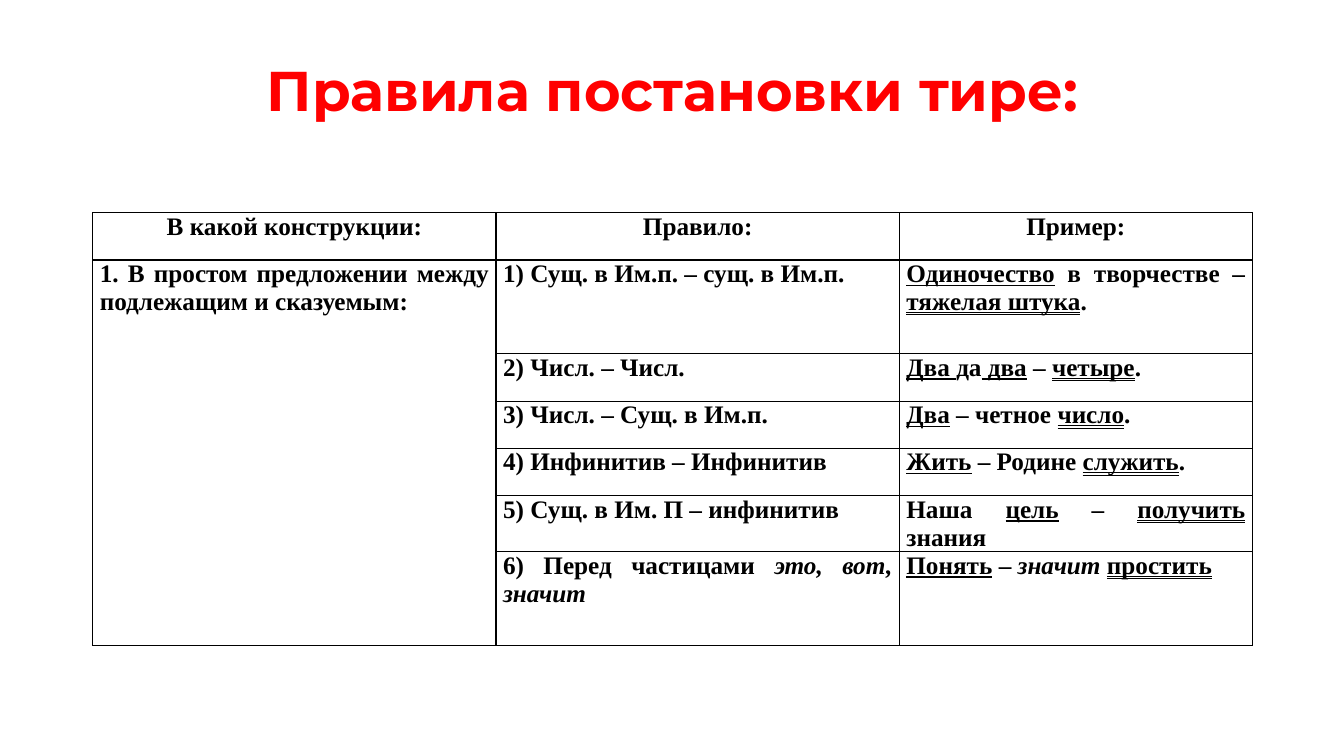
from dataclasses import dataclass
from lxml.etree import SubElement
from pptx import Presentation
from pptx.dml.color import RGBColor as RGB
from pptx.enum.text import MSO_ANCHOR as Anchor, MSO_UNDERLINE as Line, PP_ALIGN as Align
from pptx.oxml.ns import qn
from pptx.util import Inches, Pt


@dataclass(frozen=True)
class Theme:
    red: RGB = RGB(0xFF, 0, 0)
    ink: RGB = RGB(0, 0, 0)
    head: str = "Montserrat"
    body: str = "Times New Roman"
    big: int = 40
    text: int = 18
    rule: int = 1


THEME = Theme()
COLS = [4, 4, 3.5]
ROWS = [0.47, 0.93, 0.47, 0.47, 0.47, 0.47, 0.93]

# Pieces are split by "|"; a leading mark sets the style:
# "_" subject (single line), "=" predicate (double line), "/" italic
CELLS = [
    ["В какой конструкции:", "Правило:", "Пример:"],
    ["1. В простом предложении между подлежащим и сказуемым:",
     "1) Сущ. в Им.п. – сущ. в Им.п.",
     "_Одиночество| в творчестве – |=тяжелая штука|."],
    ["", "2) Числ. – Числ.", "_Два |да|_ два| – |=четыре|."],
    ["", "3) Числ. – Сущ. в Им.п.", "_Два| – четное |=число|."],
    ["", "4) Инфинитив – Инфинитив", "_Жить| – Родине |=служить|."],
    ["", "5) Сущ. в Им. П – инфинитив", "Наша |_цель| – |=получить |знания"],
    ["", "6) Перед частицами |/это, вот, значит",
     "_Понять| – |/значит |=простить"],
]
LINES = {"_": Line.SINGLE_LINE, "=": Line.DOUBLE_LINE}


def style(run, face, size, color):
    font = run.font
    font.name, font.size, font.bold = face, Pt(size), True
    font.color.rgb = color


def add_title(slide, left, top, width, height):
    title = slide.shapes.title
    title.left, title.top = Inches(left), Inches(top)
    title.width, title.height = Inches(width), Inches(height)
    frame = title.text_frame
    frame.text = "Правила постановки тире:"
    frame.vertical_anchor = Anchor.MIDDLE
    para = frame.paragraphs[0]
    para.alignment, para.line_spacing = Align.CENTER, 0.9
    style(para.runs[0], THEME.head, THEME.big, THEME.red)


def write(para, text):
    for part in text.split("|"):
        mark = part[0] if part[0] in "_=/" else ""
        run = para.add_run()
        run.text = part[len(mark):]
        style(run, THEME.body, THEME.text, THEME.ink)
        if mark in LINES:
            run.font.underline = LINES[mark]
        elif mark == "/":
            run.font.italic = True


def frame_cell(cell):
    cell.margin_left = cell.margin_right = Inches(0.07)
    cell.margin_top = cell.margin_bottom = 0
    props = cell._tc.get_or_add_tcPr()
    for side in ("a:lnL", "a:lnR", "a:lnT", "a:lnB"):
        edge = SubElement(props, qn(side), w=str(Pt(THEME.rule)))
        fill = SubElement(edge, qn("a:solidFill"))
        SubElement(fill, qn("a:srgbClr"), val=str(THEME.ink))
    cell.fill.background()


def add_rules(slide, left, top):
    shape = slide.shapes.add_table(
        len(ROWS), len(COLS), Inches(left), Inches(top),
        Inches(sum(COLS)), Inches(sum(ROWS)))
    table = shape.table
    table.first_row = table.horz_banding = False
    for col, width in zip(table.columns, COLS):
        col.width = Inches(width)
    for row, height in zip(table.rows, ROWS):
        row.height = Inches(height)
    # One construction covers all six rules
    table.cell(1, 0).merge(table.cell(len(ROWS) - 1, 0))
    for r, line in enumerate(CELLS):
        for c, text in enumerate(line):
            cell = table.cell(r, c)
            frame_cell(cell)
            if text:
                para = cell.text_frame.paragraphs[0]
                para.alignment = Align.JUSTIFY if r else Align.CENTER
                write(para, text)


def main():
    deck = Presentation()
    deck.slide_width, deck.slide_height = Inches(13.33), Inches(7.5)
    slide = deck.slides.add_slide(deck.slide_layouts[5])
    add_title(slide, 0.92, 0.4, 11.5, 1.05)
    add_rules(slide, 0.92, 2.11)
    deck.save("out.pptx")


if __name__ == "__main__":
    main()
